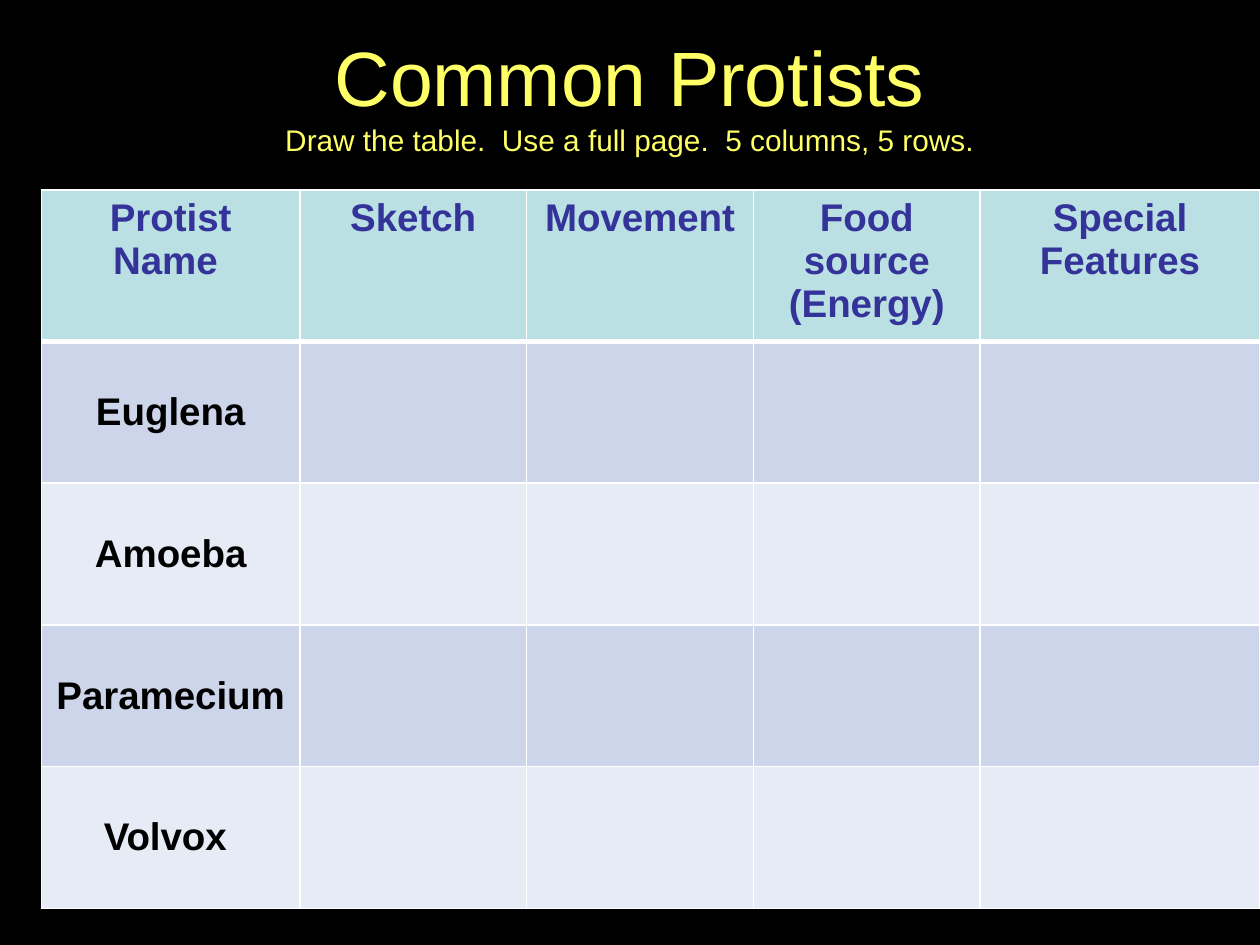
from typing import NamedTuple

from pptx import Presentation, util as u
from pptx.dml.color import RGBColor
from pptx.enum import text
from pptx.oxml.ns import qn
from lxml import etree

COLORS = {
    "background": "000000",
    "title": "FFFF66",
    "header_text": "333399",
    "header_fill": "BBE0E3",
    "name_text": "000000",
    "odd_row": "CCD5EA",
    "even_row": "E7EBF5",
    "border": "FFFFFF",
}
FONT = "Arial"
ROW_HEIGHT = 1.125


class Column(NamedTuple):
    heading: str
    width: float


COLUMNS = [
    Column("Protist\nName ", 2.05),
    Column("Sketch", 1.8),
    Column("Movement", 1.8),
    Column("Food source (Energy)", 1.8),
    Column("Special Features", 2.22),
]
PROTISTS = ["Euglena", "Amoeba", "Paramecium", "Volvox "]


def rgb(name: str) -> RGBColor:
    return RGBColor.from_string(COLORS[name])


def add_text(paragraph, content: str, *, size: float, color: str, bold: bool = False) -> None:
    """Add one centred run in the given format."""
    paragraph.alignment = text.PP_ALIGN.CENTER
    run = paragraph.add_run()
    run.text = content
    run.font.name = FONT
    run.font.size = u.Pt(size)
    run.font.bold = bold
    run.font.color.rgb = rgb(color)


def set_borders(cell, widths: dict[str, float]) -> None:
    properties = cell._tc.get_or_add_tcPr()
    for side, width in widths.items():
        line = etree.SubElement(properties, qn(f"a:ln{side}"), w=str(u.Pt(width)))
        fill = etree.SubElement(line, qn("a:solidFill"))
        etree.SubElement(fill, qn("a:srgbClr"), val=COLORS["border"])


def add_title(slide) -> None:
    box = slide.shapes.add_textbox(u.Inches(0.75), u.Inches(0), u.Inches(8.5), u.Inches(1.25))
    frame = box.text_frame
    frame.word_wrap = True
    frame.vertical_anchor = text.MSO_ANCHOR.BOTTOM
    frame.margin_left = frame.margin_right = frame.margin_bottom = 0
    paragraph = frame.paragraphs[0]
    add_text(paragraph, "Common Protists", size=44, color="title")
    paragraph.add_line_break()
    add_text(paragraph, "Draw the table.  Use a full page.  5 columns, 5 rows.",
             size=17, color="title")


def add_protist_table(slide) -> None:
    row_count = len(PROTISTS) + 1
    width = sum(column.width for column in COLUMNS)
    table = slide.shapes.add_table(
        row_count, len(COLUMNS), u.Inches(0.33), u.Inches(1.51),
        u.Inches(width), u.Inches(ROW_HEIGHT * row_count)).table
    table.horz_banding = False
    for table_column, column in zip(table.columns, COLUMNS):
        table_column.width = u.Inches(column.width)

    # Fills and borders, with a heavier rule under the header
    for row_index, row in enumerate(table.rows):
        row.height = u.Inches(ROW_HEIGHT)
        fill = "header_fill" if row_index == 0 else "odd_row" if row_index % 2 else "even_row"
        for cell in row.cells:
            set_borders(cell, {"L": 1, "R": 1, "T": 3 if row_index == 1 else 1,
                               "B": 3 if row_index == 0 else 1})
            cell.fill.solid()
            cell.fill.fore_color.rgb = rgb(fill)

    # Header row
    for index, column in enumerate(COLUMNS):
        frame = table.cell(0, index).text_frame
        for line_index, line in enumerate(column.heading.split("\n")):
            paragraph = frame.add_paragraph() if line_index else frame.paragraphs[0]
            add_text(paragraph, line, size=22, color="header_text", bold=True)

    # Protist names
    for index, name in enumerate(PROTISTS, start=1):
        cell = table.cell(index, 0)
        cell.vertical_anchor = text.MSO_ANCHOR.MIDDLE
        add_text(cell.text_frame.paragraphs[0], name, size=22, color="name_text", bold=True)


def main() -> None:
    presentation = Presentation()
    presentation.slide_width = u.Inches(10)
    presentation.slide_height = u.Inches(7.5)
    slide = presentation.slides.add_slide(presentation.slide_layouts[6])
    slide.background.fill.solid()
    slide.background.fill.fore_color.rgb = rgb("background")
    add_title(slide)
    add_protist_table(slide)
    presentation.save("out.pptx")


if __name__ == "__main__":
    main()
